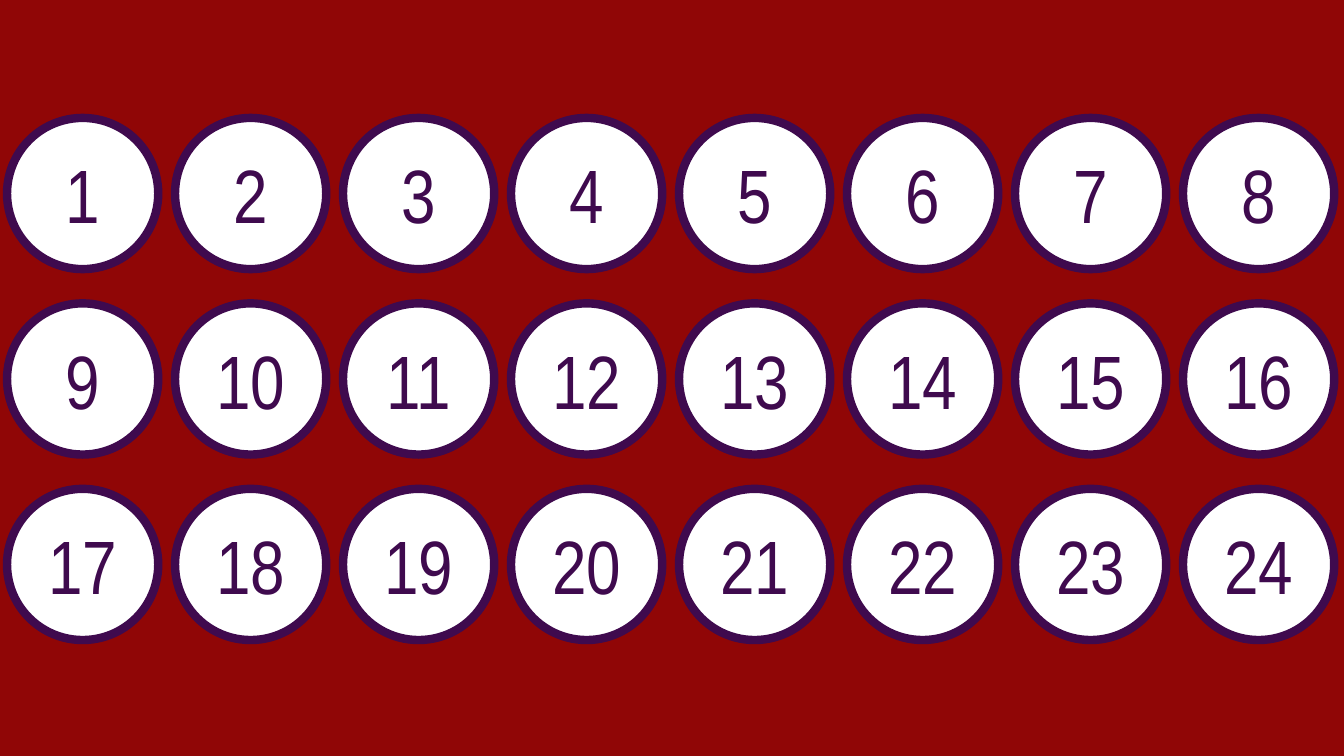
from dataclasses import dataclass

from pptx import Presentation
from pptx.dml.color import RGBColor
from pptx.enum.shapes import MSO_SHAPE
from pptx.enum.text import MSO_ANCHOR, PP_ALIGN
from pptx.shapes.autoshape import Shape
from pptx.slide import Slide
from pptx.util import Inches, Pt

CIRCLE = MSO_SHAPE.OVAL
MIDDLE = MSO_ANCHOR.MIDDLE
CENTER = PP_ALIGN.CENTER
BLANK_LAYOUT = 6


@dataclass(frozen=True)
class Theme:
    background: RGBColor = RGBColor(0x90, 0x06, 0x06)
    disc: RGBColor = RGBColor(0xFF, 0xFF, 0xFF)
    ink: RGBColor = RGBColor(0x3F, 0x0A, 0x4E)
    font: str = "Arial Narrow"
    number_size: float = 54
    ring_width: float = 6


@dataclass(frozen=True)
class Grid:
    """Lengths in inches; columns share the slide's width equally."""
    width: float = 13.333
    height: float = 7.5
    columns: int = 8
    rows: int = 3
    left: float = 0.07
    top: float = 1.17
    row_pitch: float = 1.84
    diameter: float = 1.5

    @property
    def column_pitch(self) -> float:
        return self.width / self.columns


@dataclass(frozen=True)
class Ball:
    number: int
    column: int
    row: int


THEME = Theme()
GRID = Grid()


def write_text(shape: Shape, text: str, *, size: float, color: RGBColor, font: str) -> None:
    frame = shape.text_frame
    frame.vertical_anchor = MIDDLE
    para = frame.paragraphs[0]
    para.alignment = CENTER
    span = para.add_run()
    span.text = text
    span.font.size = Pt(size)
    span.font.name = font
    span.font.color.rgb = color


def draw_ball(page: Slide, ball: Ball) -> None:
    disc = page.shapes.add_shape(
        CIRCLE,
        Inches(GRID.left + ball.column * GRID.column_pitch),
        Inches(GRID.top + ball.row * GRID.row_pitch),
        Inches(GRID.diameter),
        Inches(GRID.diameter),
    )
    disc.name = f"Ball {ball.number}"
    disc.shadow.inherit = False
    disc.fill.solid()
    disc.fill.fore_color.rgb = THEME.disc
    disc.line.color.rgb = THEME.ink
    disc.line.width = Pt(THEME.ring_width)
    write_text(disc, str(ball.number), size=THEME.number_size, color=THEME.ink, font=THEME.font)


def main() -> None:
    # Slide and background
    deck = Presentation()
    deck.slide_width = Inches(GRID.width)
    deck.slide_height = Inches(GRID.height)
    page = deck.slides.add_slide(deck.slide_layouts[BLANK_LAYOUT])
    page.background.fill.solid()
    page.background.fill.fore_color.rgb = THEME.background

    # Numbered balls, row by row
    for index in range(GRID.rows * GRID.columns):
        row, column = divmod(index, GRID.columns)
        draw_ball(page, Ball(index + 1, column, row))

    deck.save("out.pptx")


if __name__ == "__main__":
    main()
